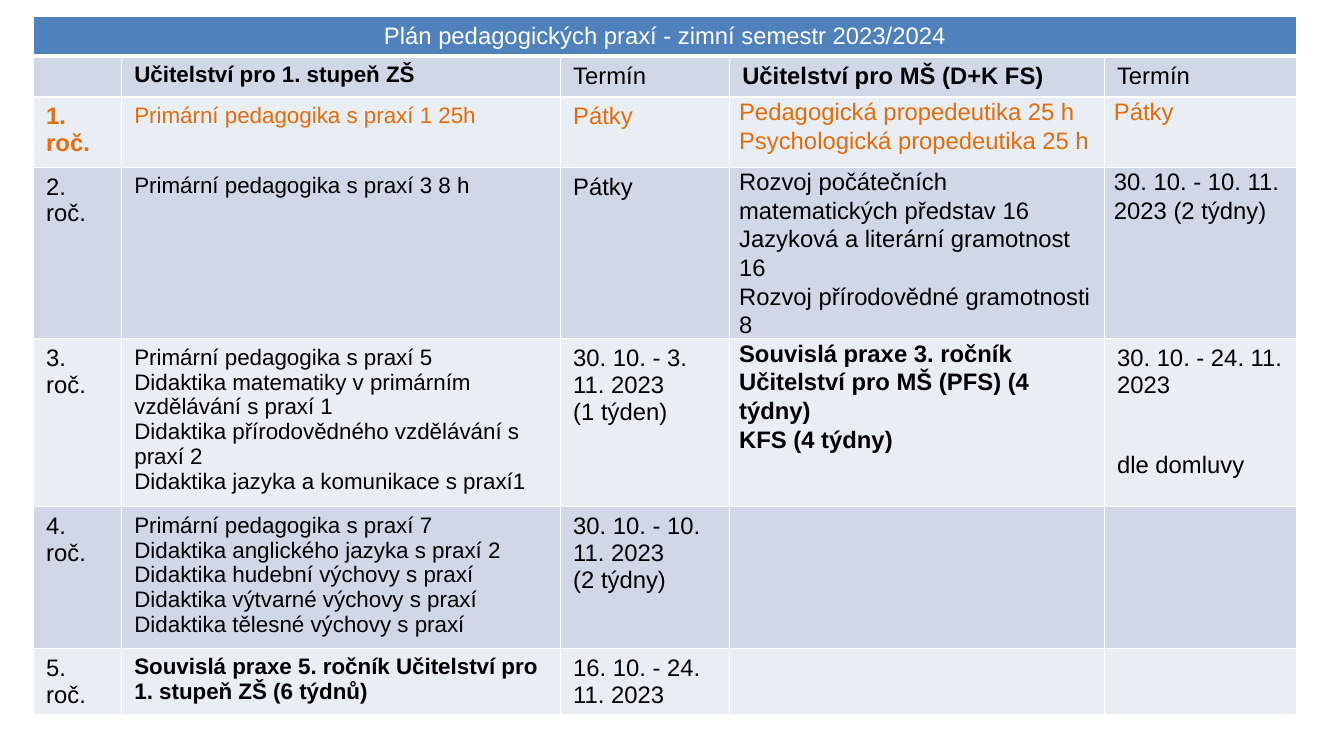
import pptx
import pptx.dml.color
import pptx.enum.text
import pptx.oxml.ns
import pptx.util
from lxml import etree

PX = 9525
COLORS = {"header": "4F81BD", "dark": "D0D8E8", "light": "E9EDF4",
          "white": "FFFFFF", "black": "000000", "orange": "E46C0A"}
COL_WIDTHS = [84, 418, 161, 357, 183]
ROW_HEIGHTS = [37, 38, 67, 163, 160, 135, 63]

PLAN = [
    ["Plán pedagogických praxí - zimní semestr 2023/2024", "", "", "", ""],
    ["", "Učitelství pro 1. stupeň ZŠ", "Termín", "Učitelství pro MŠ (D+K FS)", "Termín"],
    ["1. roč.", "Primární pedagogika s praxí 1 25h", "Pátky",
     "Pedagogická propedeutika 25 h\nPsychologická propedeutika 25 h", "Pátky"],
    ["2. roč.", "Primární pedagogika s praxí 3 8 h", "Pátky",
     "Rozvoj počátečních matematických představ 16\n"
     "Jazyková a literární gramotnost 16\n"
     "Rozvoj přírodovědné gramotnosti 8",
     "30. 10. - 10. 11. 2023 (2 týdny)"],
    ["3. roč.",
     "Primární pedagogika s praxí 5\n"
     "Didaktika matematiky v primárním vzdělávání s praxí 1\n"
     "Didaktika přírodovědného vzdělávání s praxí 2\n"
     "Didaktika jazyka a komunikace s praxí1",
     "30. 10. - 3. 11. 2023\n(1 týden)",
     "Souvislá praxe 3. ročník Učitelství pro MŠ (PFS) (4 týdny)\nKFS (4 týdny)",
     "30. 10. - 24. 11. 2023\ndle domluvy"],
    ["4. roč.",
     "Primární pedagogika s praxí 7\n"
     "Didaktika anglického jazyka s praxí 2\n"
     "Didaktika hudební výchovy s praxí\n"
     "Didaktika výtvarné výchovy s praxí\n"
     "Didaktika tělesné výchovy s praxí",
     "30. 10. - 10. 11. 2023\n(2 týdny)", "", ""],
    ["5. roč.", "Souvislá praxe 5. ročník Učitelství pro 1. stupeň ZŠ (6 týdnů)",
     "16. 10. - 24. 11. 2023", "", ""],
]
BOLD_CELLS = {(1, 1), (1, 3), (2, 0), (4, 3), (6, 1)}
TIGHT_CELLS = {(2, 3), (2, 4), (3, 3), (3, 4), (4, 3)}


def write_text(cell, text, size=17, color="black", bold=False, tight=False, align=None, gap=0):
    """Fill a cell, one paragraph per line; gap is the space in points between them."""
    cell.margin_left = cell.margin_right = (9 if tight else 12) * PX
    cell.margin_top = cell.margin_bottom = (0 if tight else 6) * PX
    tf = cell.text_frame
    for i, line in enumerate(text.split("\n")):
        p = tf.paragraphs[0] if i == 0 else tf.add_paragraph()
        p.alignment = align
        if tight:
            p.line_spacing = 1.07
        if i and gap:
            p.space_before = pptx.util.Pt(gap)
        r = p.add_run()
        r.text = line
        r.font.name = "Arial"
        r.font.size = pptx.util.Pt(size)
        r.font.bold = bold
        r.font.color.rgb = pptx.dml.color.RGBColor.from_string(COLORS[color])


def set_borders(cell, top=1, bottom=1):
    tc_pr = cell._tc.get_or_add_tcPr()
    sides = [("lnL", 1), ("lnR", 1), ("lnT", top), ("lnB", bottom)]
    for i, (side, width) in enumerate(sides):
        ln = etree.Element(pptx.oxml.ns.qn(f"a:{side}"), w=str(pptx.util.Pt(width)))
        fill = etree.SubElement(ln, pptx.oxml.ns.qn("a:solidFill"))
        etree.SubElement(fill, pptx.oxml.ns.qn("a:srgbClr"), val=COLORS["white"])
        tc_pr.insert(i, ln)


prs = pptx.Presentation()
prs.slide_width = 1280 * PX
prs.slide_height = 720 * PX
slide = prs.slides.add_slide(prs.slide_layouts[6])

table = slide.shapes.add_table(
    len(ROW_HEIGHTS), len(COL_WIDTHS), 32 * PX, 16 * PX,
    sum(COL_WIDTHS) * PX, sum(ROW_HEIGHTS) * PX).table
for column, width in zip(table.columns, COL_WIDTHS):
    column.width = width * PX
for row, height in zip(table.rows, ROW_HEIGHTS):
    row.height = height * PX
table.cell(0, 0).merge(table.cell(0, 4))

for r, texts in enumerate(PLAN):
    band = "header" if r == 0 else "dark" if r % 2 else "light"
    for c, text in enumerate(texts):
        cell = table.cell(r, c)
        cell.fill.solid()
        cell.fill.fore_color.rgb = pptx.dml.color.RGBColor.from_string(COLORS[band])
        set_borders(cell, top=3 if r == 1 else 1, bottom=3 if r == 0 else 1)
        if text:
            write_text(
                cell, text,
                size=16 if c == 1 else 17,
                color={0: "white", 2: "orange"}.get(r, "black"),
                bold=(r, c) in BOLD_CELLS,
                tight=(r, c) in TIGHT_CELLS,
                align=pptx.enum.text.PP_ALIGN.CENTER if r == 0 else None,
                gap=38 if (r, c) == (4, 4) else 0)

prs.save("out.pptx")
